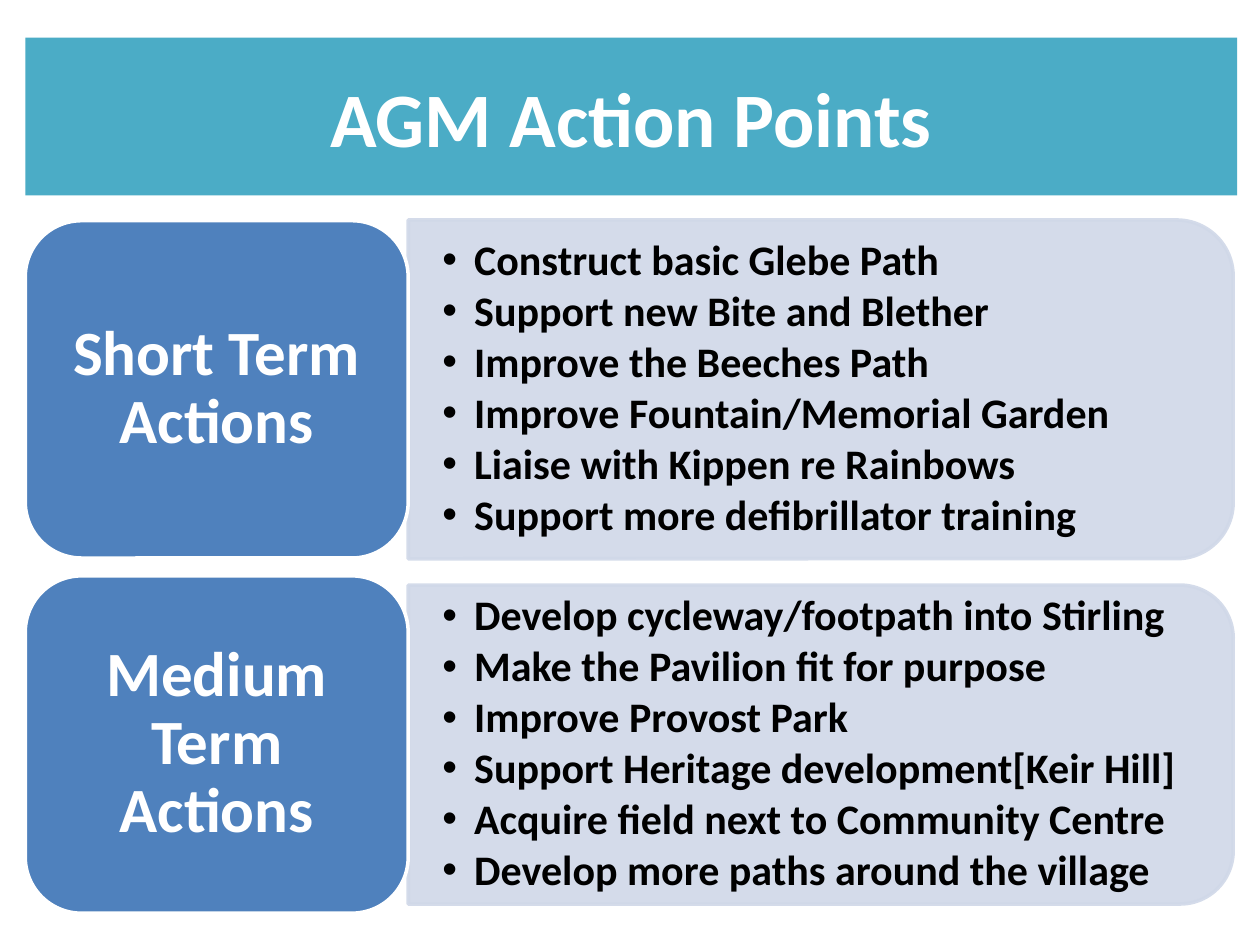
from lxml import etree
from pptx import Presentation
from pptx.dml.color import RGBColor
from pptx.enum import shapes, text
from pptx.oxml import ns
from pptx.util import Cm, Pt

COLOURS = {
    "banner": "4BACC6",
    "label": "4F81BD",
    "panel": "D0D8E8",
    "light": "FFFFFF",
    "dark": "000000",
}
LEFT = 0.51
LABEL_WIDTH, LABEL_HEIGHT = 7.72, 6.8
PANEL_WIDTH = 16.63
FIRST_ROW, ROW_PITCH = 4.45, 7.16

ROWS = [
    ("Short Term Actions", 6.83, [
        "Construct basic Glebe Path",
        "Support new Bite and Blether",
        "Improve the Beeches Path",
        "Improve Fountain/Memorial Garden",
        "Liaise with Kippen re Rainbows",
        "Support more defibrillator training",
    ]),
    ("Medium Term Actions", 6.43, [
        "Develop cycleway/footpath into Stirling",
        "Make the Pavilion fit for purpose",
        "Improve Provost Park",
        "Support Heritage development[Keir Hill]",
        "Acquire field next to Community Centre",
        "Develop more paths around the village",
    ]),
]


def rgb(name):
    return RGBColor.from_string(COLOURS[name])


def add_bullet(paragraph, indent):
    properties = paragraph._p.get_or_add_pPr()
    properties.set("marL", str(indent))
    properties.set("indent", str(-indent))
    etree.SubElement(properties, ns.qn("a:buFont"), typeface="Arial")
    etree.SubElement(properties, ns.qn("a:buChar"), char="•")


def write(shape, lines, size, colour, align=text.PP_ALIGN.LEFT, spacing=0.9,
          after=0, bullet=False, margins=(0.25, 0.13)):
    """Fill a shape with bold paragraphs; margins are side and top/bottom in cm."""
    frame = shape.text_frame
    frame.word_wrap = True
    frame.auto_size = text.MSO_AUTO_SIZE.NONE
    frame.vertical_anchor = text.MSO_ANCHOR.MIDDLE
    frame.margin_left = frame.margin_right = Cm(margins[0])
    frame.margin_top = frame.margin_bottom = Cm(margins[1])
    for number, line in enumerate(lines):
        paragraph = frame.add_paragraph() if number else frame.paragraphs[0]
        paragraph.alignment = align
        paragraph.line_spacing = spacing
        paragraph.space_before = Pt(0)
        paragraph.space_after = Pt(after)
        if bullet:
            add_bullet(paragraph, Cm(0.64))
        run = paragraph.add_run()
        run.text = line
        run.font.name = "Calibri"
        run.font.size = Pt(size)
        run.font.bold = True
        run.font.color.rgb = rgb(colour)


def add_block(slide, preset, left, top, width, height, fill, line):
    block = slide.shapes.add_shape(preset, Cm(left), Cm(top), Cm(width), Cm(height))
    block.shadow.inherit = False
    block.fill.solid()
    block.fill.fore_color.rgb = rgb(fill)
    block.line.color.rgb = rgb(line)
    block.line.width = Pt(2)
    return block


def add_banner(slide, heading, left, top, width, height):
    banner = slide.shapes.title
    banner.left, banner.top = Cm(left), Cm(top)
    banner.width, banner.height = Cm(width), Cm(height)
    banner.fill.solid()
    banner.fill.fore_color.rgb = rgb("banner")
    write(banner, [heading], 44, "light", align=text.PP_ALIGN.CENTER, spacing=1.0)


def add_panel(slide, actions, left, top, width, height):
    """Panel rounded on its right side, made by turning a top-rounded shape."""
    offset = (width - height) / 2
    panel = add_block(slide, shapes.MSO_SHAPE.ROUND_2_SAME_RECTANGLE,
                      left + offset, top - offset, height, width, "panel", "panel")
    panel.rotation = 90
    for colour in panel._element.spPr.iter(ns.qn("a:srgbClr")):
        etree.SubElement(colour, ns.qn("a:alpha"), val="90000")
    action_list = slide.shapes.add_textbox(Cm(left), Cm(top), Cm(width - 0.32), Cm(height))
    write(action_list, actions, 24, "dark", after=3.2, bullet=True, margins=(0.69, 0.36))


def add_row(slide, term, panel_height, actions, left, top):
    add_panel(slide, actions, left + LABEL_WIDTH,
              top + (LABEL_HEIGHT - panel_height) / 2, PANEL_WIDTH, panel_height)
    label = add_block(slide, shapes.MSO_SHAPE.ROUNDED_RECTANGLE, left, top,
                      LABEL_WIDTH, LABEL_HEIGHT, "label", "light")
    write(label, [term], 36, "light", align=text.PP_ALIGN.CENTER, margins=(0.38, 0.18))


def main():
    deck = Presentation()
    deck.slide_width, deck.slide_height = Cm(25.4), Cm(19.05)
    slide = deck.slides.add_slide(deck.slide_layouts.get_by_name("Title Only"))
    add_banner(slide, "AGM Action Points", LEFT, 0.76, 24.43, 3.18)
    for number, (term, panel_height, actions) in enumerate(ROWS):
        add_row(slide, term, panel_height, actions, LEFT, FIRST_ROW + number * ROW_PITCH)
    deck.save("out.pptx")


if __name__ == "__main__":
    main()
